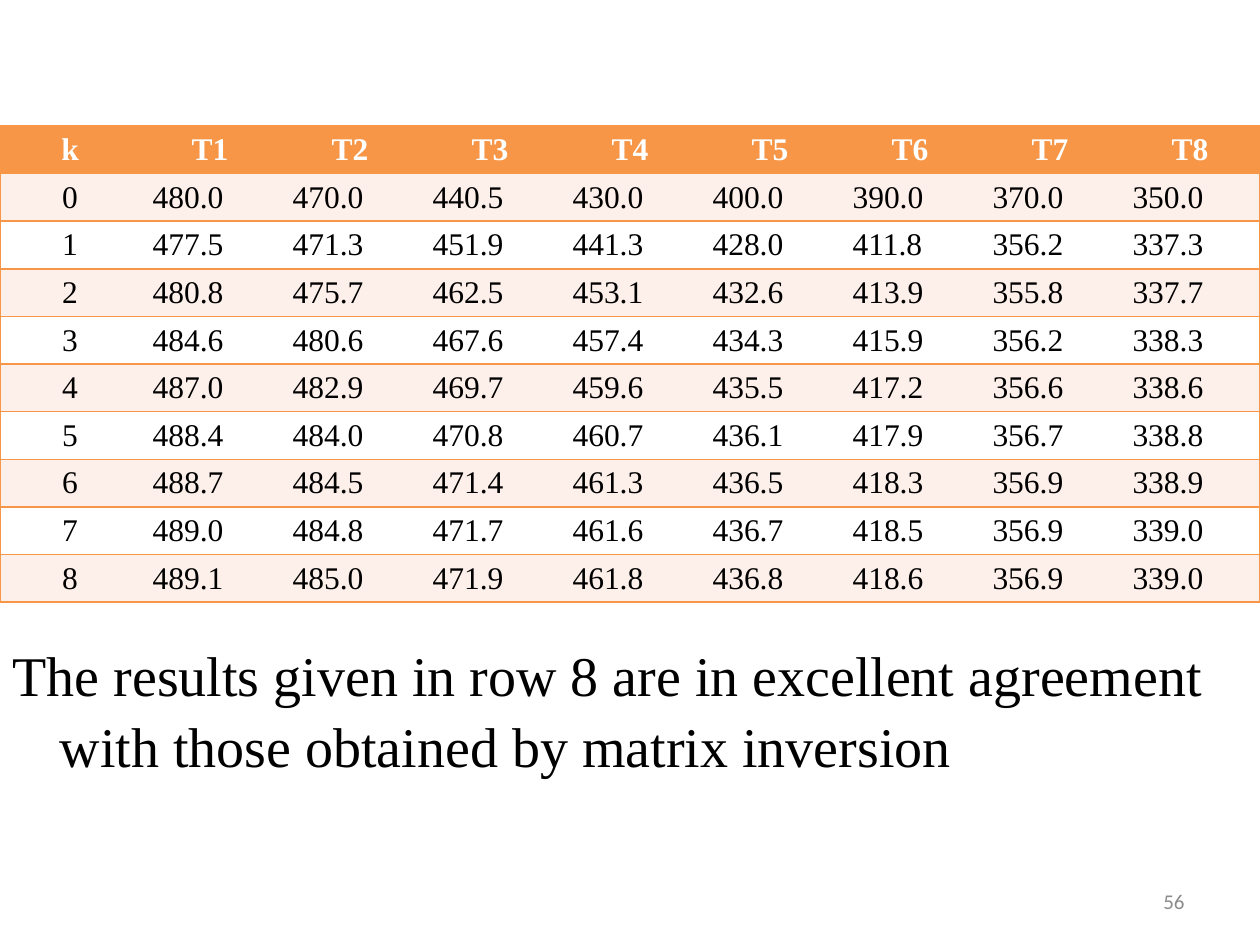
from lxml import etree
from pptx import Presentation
from pptx.dml.color import RGBColor
from pptx.enum.text import MSO_ANCHOR, PP_ALIGN
from pptx.oxml.ns import qn
from pptx.util import Cm, Pt

MIDDLE = MSO_ANCHOR.MIDDLE
LEFT, MID, RIGHT = PP_ALIGN.LEFT, PP_ALIGN.CENTER, PP_ALIGN.RIGHT
WIDE, HIGH = 25.4, 19.05
PLAIN = "{2D5ABB26-0587-4C30-8999-92F81FD0307C}"
HUES = {"head": "F79646", "band": "FDEFE9", "white": "FFFFFF",
        "ink": "000000", "gray": "8C8C8C"}

# Temperatures at each iteration k
TEMPS = [
    ["480.0", "470.0", "440.5", "430.0", "400.0", "390.0", "370.0", "350.0"],
    ["477.5", "471.3", "451.9", "441.3", "428.0", "411.8", "356.2", "337.3"],
    ["480.8", "475.7", "462.5", "453.1", "432.6", "413.9", "355.8", "337.7"],
    ["484.6", "480.6", "467.6", "457.4", "434.3", "415.9", "356.2", "338.3"],
    ["487.0", "482.9", "469.7", "459.6", "435.5", "417.2", "356.6", "338.6"],
    ["488.4", "484.0", "470.8", "460.7", "436.1", "417.9", "356.7", "338.8"],
    ["488.7", "484.5", "471.4", "461.3", "436.5", "418.3", "356.9", "338.9"],
    ["489.0", "484.8", "471.7", "461.6", "436.7", "418.5", "356.9", "339.0"],
    ["489.1", "485.0", "471.9", "461.8", "436.8", "418.6", "356.9", "339.0"],
]


class Deck:
    """Holds the style and the current slide."""

    font = "Times New Roman"

    def __init__(self):
        self.prs = Presentation()
        self.prs.slide_width, self.prs.slide_height = Cm(WIDE), Cm(HIGH)
        self.slide = self.prs.slides.add_slide(self.prs.slide_layouts[1])
        title = self.slide.shapes.title
        title.element.getparent().remove(title.element)

    def add_text(self, para, text, size, hue="ink", align=LEFT, bold=False, font=None):
        para.alignment = align
        run = para.add_run()
        run.text = text
        run.font.name = font or self.font
        run.font.size, run.font.bold = Pt(size), bold
        run.font.color.rgb = RGBColor.from_string(HUES[hue])

    def body(self, text, x, y, w, h):
        box = self.slide.placeholders[1]
        box.left, box.top, box.width, box.height = Cm(x), Cm(y), Cm(w), Cm(h)
        para = box.text_frame.paragraphs[0]
        para.space_before, para.line_spacing = Pt(0), 1.06
        props = para._p.get_or_add_pPr()
        props.set("marL", str(Cm(0.95)))
        props.set("indent", str(Cm(-0.95)))
        etree.SubElement(props, qn("a:buNone"))
        self.add_text(para, text, 32)

    def edge(self, cell, sides):
        props = cell._tc.get_or_add_tcPr()
        for side in sides:
            line = etree.SubElement(props, qn("a:ln" + side), w=str(Pt(1)))
            fill = etree.SubElement(line, qn("a:solidFill"))
            etree.SubElement(fill, qn("a:srgbClr"), val=HUES["head"])

    def table(self, rows, x, y, w, step):
        cols = len(rows[0])
        frame = self.slide.shapes.add_table(
            len(rows), cols, Cm(x), Cm(y), Cm(w), Cm(step * len(rows)))
        grid = frame.table
        grid.horz_banding = False
        grid._tbl.tblPr.find(qn("a:tableStyleId")).text = PLAIN
        for r, row in enumerate(rows):
            grid.rows[r].height = Cm(step)
            hue = "head" if r == 0 else "band" if r % 2 else "white"
            for c, text in enumerate(row):
                cell = grid.cell(r, c)
                cell.margin_top = cell.margin_bottom = Cm(0.1)
                cell.vertical_anchor = MIDDLE
                # Outer sides close the frame; rules run under every row
                sides = ["L"] * (c == 0) + ["R"] * (c == cols - 1) + ["T", "B"]
                self.edge(cell, sides)
                cell.fill.solid()
                cell.fill.fore_color.rgb = RGBColor.from_string(HUES[hue])
                self.add_text(cell.text_frame.paragraphs[0], text, 18,
                              "ink" if r else "white",
                              LEFT if r and c else MID, r == 0)

    def label(self, text, x, y, w, h):
        box = self.slide.shapes.add_textbox(Cm(x), Cm(y), Cm(w), Cm(h))
        frame = box.text_frame
        frame.word_wrap, frame.vertical_anchor = True, MIDDLE
        self.add_text(frame.paragraphs[0], text, 12, "gray", RIGHT, font="Calibri")


def main():
    deck = Deck()
    # Conclusion
    deck.body("The results given in row 8 are in excellent agreement "
              "with those obtained by matrix inversion", 0, 12.7, WIDE, 4)
    # Iteration table
    head = ["k"] + [f"T{n}" for n in range(1, 9)]
    rows = [[str(k)] + temps for k, temps in enumerate(TEMPS)]
    deck.table([head] + rows, 0, 2.54, WIDE, 0.96)
    # Slide number
    deck.label("56", 18.2, 17.66, 5.93, 1.01)
    deck.prs.save("out.pptx")


if __name__ == "__main__":
    main()
